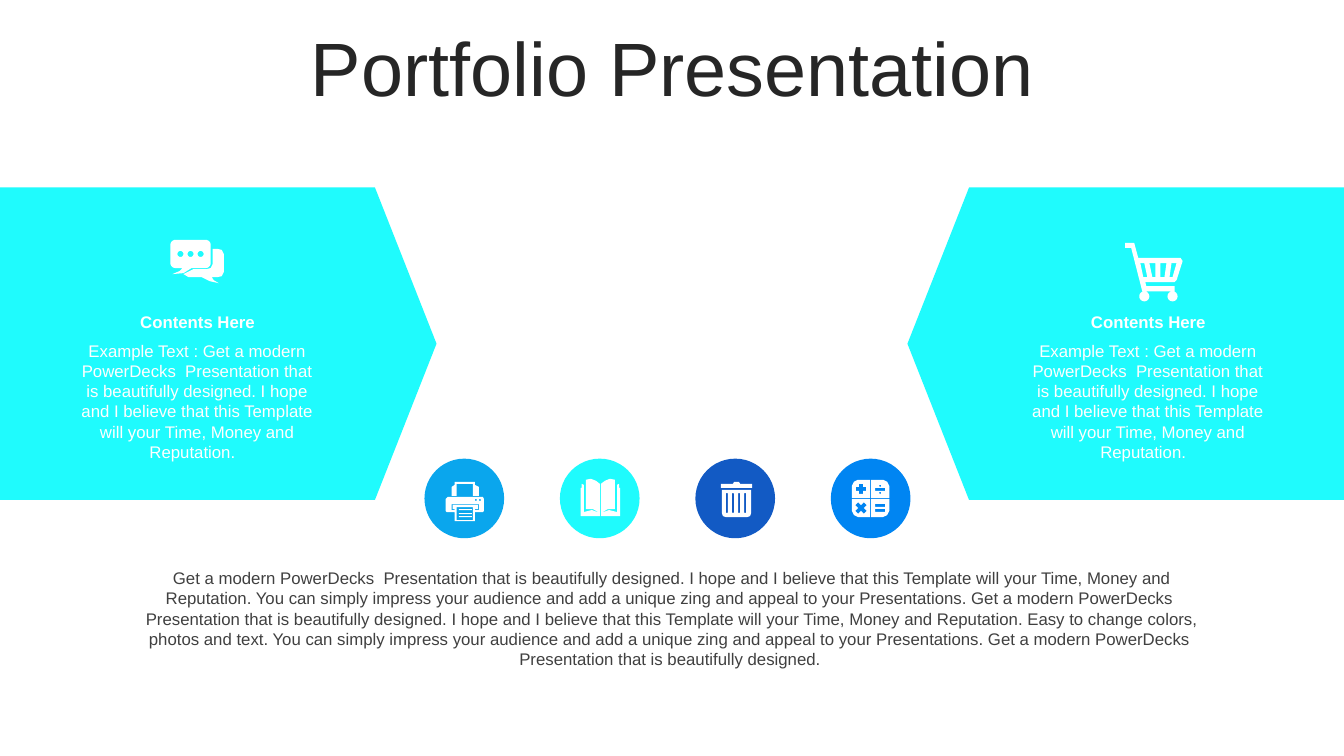
from math import cos, pi, sin

from pptx import Presentation
from pptx.dml.color import RGBColor
from pptx.enum.shapes import MSO_SHAPE
from pptx.enum.text import MSO_ANCHOR, PP_ALIGN
from pptx.util import Inches, Pt

WHITE = RGBColor(0xFF, 0xFF, 0xFF)
TITLE_GREY = RGBColor(0x26, 0x26, 0x26)
BODY_GREY = RGBColor(0x40, 0x40, 0x40)
CYAN = RGBColor(0x1F, 0xFB, 0xFD)
SKY = RGBColor(0x0A, 0xA6, 0xED)
NAVY = RGBColor(0x12, 0x5A, 0xC4)
BLUE = RGBColor(0x00, 0x85, 0xF2)

DISC_COLORS = [SKY, CYAN, NAVY, BLUE]
DISC_FIRST, DISC_LAST, DISC_TOP, DISC_SIZE = 4.21, 8.24, 4.55, 0.79

PANEL_TEXT = (
    "Example Text : Get a modern PowerDecks  Presentation that is beautifully designed. "
    "I hope and I believe that this Template will your Time, Money and Reputation.  "
)
SUMMARY = (
    "Get a modern PowerDecks  Presentation that is beautifully designed. "
    "I hope and I believe that this Template will your Time, Money and Reputation. "
    "You can simply impress your audience and add a unique zing and appeal to your Presentations. "
    "Get a modern PowerDecks  Presentation that is beautifully designed. "
    "I hope and I believe that this Template will your Time, Money and Reputation. "
    "Easy to change colors, photos and text. "
    "You can simply impress your audience and add a unique zing and appeal to your Presentations. "
    "Get a modern PowerDecks  Presentation that is beautifully designed. "
)


def box(left, top, width, height, radius=0):
    """Return the outline of a rectangle, with rounded corners if a radius is given."""
    right, bottom = left + width, top + height
    if not radius:
        return [(left, top), (right, top), (right, bottom), (left, bottom)]
    centers = [
        (right - radius, bottom - radius),
        (left + radius, bottom - radius),
        (left + radius, top + radius),
        (right - radius, top + radius),
    ]
    return [
        (x + radius * cos(angle), y + radius * sin(angle))
        for corner, (x, y) in enumerate(centers)
        for angle in [(corner + step / 6) * pi / 2 for step in range(7)]
    ]


def dot(x, y, radius):
    """Return the outline of a circle."""
    return box(x - radius, y - radius, 2 * radius, 2 * radius, radius)


def cross(x, y, arm, half, turn=0):
    """Return the outline of a plus sign, turned by an angle."""
    corners = [(half, -arm), (half, -half), (arm, -half)]
    outline = []
    for quarter in range(4):
        angle = turn + quarter * pi / 2
        outline += [
            (x + u * cos(angle) - v * sin(angle), y + u * sin(angle) + v * cos(angle))
            for u, v in corners
        ]
    return outline


def chat_icon():
    """Return the outlines of two speech bubbles."""
    front_tail = [(1.81, 2.66), (1.9, 2.66), (1.82, 2.71), (1.71, 2.72), (1.78, 2.69)]
    back = [
        (2.11, 2.47), (2.16, 2.47), (2.2, 2.48), (2.22, 2.52), (2.22, 2.7), (2.2, 2.74),
        (2.16, 2.75), (2.1, 2.75), (2.12, 2.78), (2.17, 2.81), (2.08, 2.79), (2, 2.75),
        (1.87, 2.75), (1.82, 2.72), (1.92, 2.67), (2.05, 2.67), (2.09, 2.66), (2.11, 2.62),
    ]
    dots = [dot(x, 2.52, 0.03) for x in (1.79, 1.89, 1.99)]
    return [box(1.69, 2.38, 0.4, 0.28, 0.05), front_tail, back] + dots


def cart_icon():
    """Return the outlines of a shopping cart."""
    frame = [
        (11.16, 2.41), (11.25, 2.41), (11.29, 2.56), (11.71, 2.56), (11.73, 2.59),
        (11.67, 2.78), (11.65, 2.8), (11.36, 2.8), (11.37, 2.84), (11.65, 2.84),
        (11.65, 2.89), (11.33, 2.89), (11.22, 2.46), (11.16, 2.46),
    ]
    slots = [
        [(top_left, 2.61), (top_right, 2.61), (low_right, 2.75), (low_left, 2.75)]
        for top_left, top_right, low_right, low_left in [
            (11.31, 11.35, 11.38, 11.34), (11.4, 11.46, 11.46, 11.43),
            (11.51, 11.57, 11.55, 11.51), (11.62, 11.67, 11.63, 11.6),
        ]
    ]
    return [frame] + slots + [dot(x, 2.94, 0.05) for x in (11.35, 11.63)]


def printer_icon():
    """Return the outlines of a printer."""
    feed = [
        (4.48, 4.92), (4.48, 4.83), (4.51, 4.81), (4.51, 4.78), (4.71, 4.78), (4.71, 4.81),
        (4.75, 4.83), (4.75, 4.92), (4.69, 4.92), (4.69, 4.8), (4.53, 4.8), (4.53, 4.92),
    ]
    body = [
        (4.44, 4.93), (4.79, 4.93), (4.8, 4.95), (4.8, 5.07), (4.79, 5.08), (4.71, 5.08),
        (4.71, 5.17), (4.51, 5.17), (4.51, 5.08), (4.43, 5.08), (4.42, 5.07), (4.42, 4.95),
    ]
    slot = [
        (4.48, 5), (4.75, 5), (4.75, 5.06), (4.71, 5.06), (4.71, 5.05), (4.74, 5.05),
        (4.74, 5.01), (4.49, 5.01), (4.49, 5.05), (4.51, 5.05), (4.51, 5.06), (4.48, 5.06),
    ]
    lines = [box(4.55, y, 0.13, 0.01) for y in (5.05, 5.09, 5.12)]
    lamps = [dot(x, 4.96, 0.01) for x in (4.72, 4.76)]
    return [feed, body, slot, box(4.53, 5.03, 0.16, 0.13)] + lines + lamps


def book_icon():
    """Return the outlines of an open book, the right half mirrored from the left."""
    page = [
        (5.95, 4.8), (5.91, 4.77), (5.86, 4.75), (5.81, 4.76),
        (5.81, 5.05), (5.88, 5.05), (5.95, 5.09),
    ]
    cover = [
        (5.79, 4.81), (5.77, 4.8), (5.77, 4.84), (5.76, 4.84), (5.76, 5.12),
        (5.95, 5.12), (5.95, 5.09), (5.87, 5.06), (5.79, 5.08),
    ]
    left = [page, cover]
    return left + [[(11.91 - x, y) for x, y in outline] for outline in left]


def bin_icon():
    """Return the outlines of a waste bin."""
    lid = [
        (7.15, 4.84), (7.15, 4.8), (7.27, 4.8), (7.28, 4.78),
        (7.33, 4.78), (7.34, 4.8), (7.46, 4.8), (7.46, 4.84),
    ]
    bucket = [
        (7.16, 4.86), (7.45, 4.86), (7.45, 5.09), (7.44, 5.12),
        (7.41, 5.13), (7.2, 5.13), (7.17, 5.12), (7.16, 5.09),
    ]
    return [lid, bucket] + [box(x, 4.89, 0.02, 0.2, 0.01) for x in (7.2, 7.26, 7.32, 7.38)]


def calculator_icon():
    """Return the outlines of four calculator keys."""
    top_left = [(8.63, 4.76), (8.63, 4.94), (8.45, 4.94), (8.45, 4.82), (8.47, 4.78), (8.51, 4.76)]
    left_keys = [top_left, [(x, 9.89 - y) for x, y in top_left]]
    right_keys = [[(17.27 - x, y) for x, y in key] for key in left_keys]
    signs = [cross(8.54, 4.85, 0.05, 0.02), cross(8.54, 5.04, 0.06, 0.02, pi / 4)]
    bars = [box(8.68, y, 0.1, 0.03) for y in (4.84, 5, 5.05)]
    return left_keys + right_keys + signs + bars + [dot(8.73, y, 0.01) for y in (4.82, 4.89)]


def paint(shape, color):
    """Fill a shape and remove its line and shadow."""
    shape.shadow.inherit = False
    shape.fill.solid()
    shape.fill.fore_color.rgb = color
    shape.line.fill.background()


def add_solid(slide, kind, left, top, width, height, color):
    """Add a plain preset shape."""
    solid = slide.shapes.add_shape(kind, Inches(left), Inches(top), Inches(width), Inches(height))
    paint(solid, color)
    return solid


def add_icon(slide, outlines):
    """Add a white icon made of closed outlines."""
    contours = [[(Inches(x), Inches(y)) for x, y in outline] for outline in outlines]
    builder = slide.shapes.build_freeform(*contours[0][0])
    builder.add_line_segments(contours[0][1:], close=True)
    for contour in contours[1:]:
        builder.move_to(*contour[0])
        builder.add_line_segments(contour[1:], close=True)
    paint(builder.convert_to_shape(), WHITE)


def add_label(slide, left, top, width, height, text, color, size=12, bold=False,
              inset=(0.1, 0.05), anchor=MSO_ANCHOR.TOP, spacing=1.0):
    """Add a centred, wrapping text box."""
    label = slide.shapes.add_textbox(Inches(left), Inches(top), Inches(width), Inches(height))
    frame = label.text_frame
    frame.word_wrap = True
    frame.vertical_anchor = anchor
    frame.margin_left = frame.margin_right = Inches(inset[0])
    frame.margin_top = frame.margin_bottom = Inches(inset[1])
    paragraph = frame.paragraphs[0]
    paragraph.alignment = PP_ALIGN.CENTER
    paragraph.line_spacing = spacing
    run = paragraph.add_run()
    run.text = text
    run.font.name = "Arial"
    run.font.size = Pt(size)
    run.font.bold = bold
    run.font.color.rgb = color


def add_panel(slide, left, text_left, rotation):
    """Add a side panel with its heading and text."""
    panel = add_solid(slide, MSO_SHAPE.PENTAGON, left, 1.86, 4.33, 3.1, CYAN)
    panel.adjustments[0] = 0.197
    panel.rotation = rotation
    add_label(slide, text_left, 3.33, 2.61, 1.31, PANEL_TEXT, WHITE)
    add_label(slide, text_left, 3.04, 2.62, 0.3, "Contents Here", WHITE, bold=True, inset=(0.12, 0.05))


def main():
    """Build the slide and save it."""
    deck = Presentation()
    deck.slide_width, deck.slide_height = Inches(13.33), Inches(7.5)
    slide = deck.slides.add_slide(deck.slide_layouts[6])
    add_label(slide, 0.6, 0.35, 12.14, 0.72, "Portfolio Presentation", TITLE_GREY,
              size=54, anchor=MSO_ANCHOR.MIDDLE, spacing=0.9)
    add_panel(slide, 0, 0.65, 0)
    add_panel(slide, 9, 10.08, 180)
    step = (DISC_LAST - DISC_FIRST) / (len(DISC_COLORS) - 1)
    for index, color in enumerate(DISC_COLORS):
        add_solid(slide, MSO_SHAPE.OVAL, DISC_FIRST + index * step, DISC_TOP, DISC_SIZE, DISC_SIZE, color)
    add_label(slide, 1.44, 5.63, 10.46, 1.01, SUMMARY, BODY_GREY,
              inset=(0, 0), anchor=MSO_ANCHOR.MIDDLE)
    for icon in (chat_icon, cart_icon, printer_icon, book_icon, bin_icon, calculator_icon):
        add_icon(slide, icon())
    deck.save("out.pptx")


if __name__ == "__main__":
    main()
